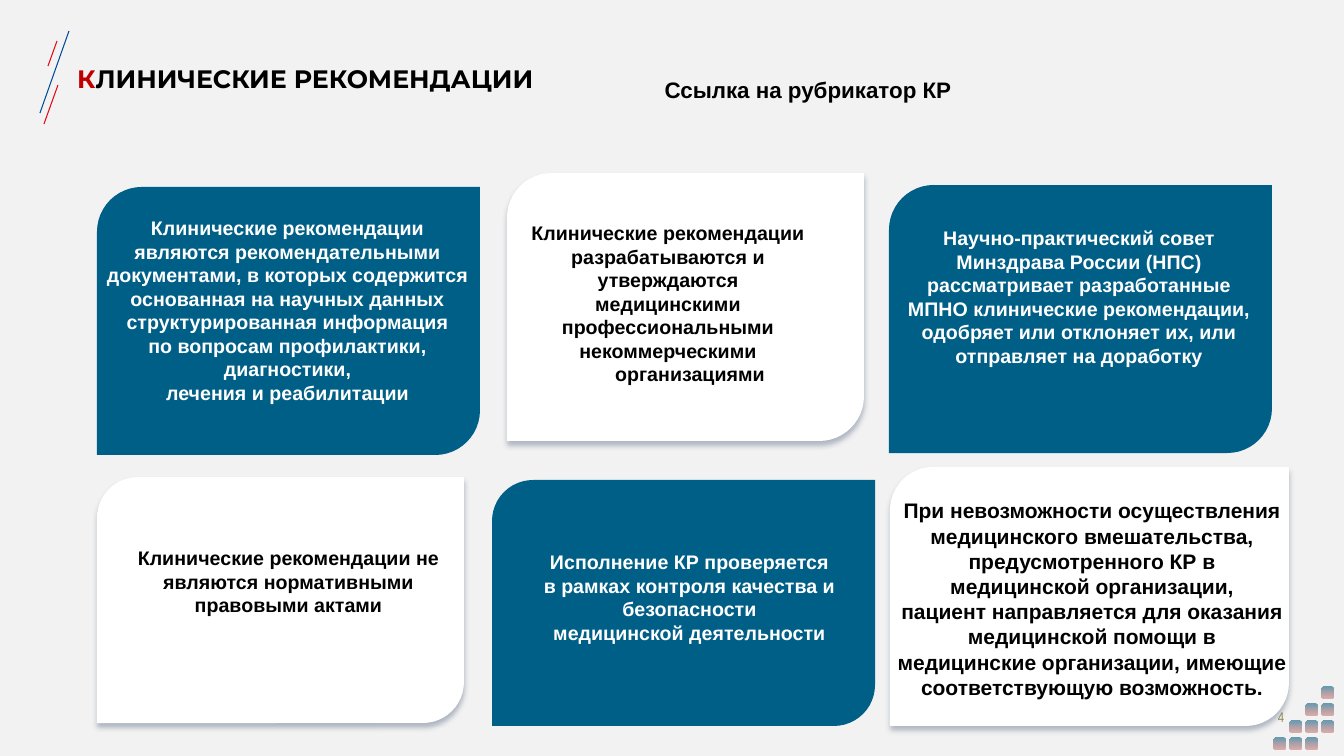
from lxml.etree import SubElement
from pptx import Presentation
from pptx.dml.color import RGBColor
from pptx.enum.shapes import MSO_CONNECTOR, MSO_SHAPE
from pptx.enum.text import MSO_ANCHOR, MSO_AUTO_SIZE, PP_ALIGN
from pptx.oxml.ns import qn
from pptx.util import Pt

PX = 12192000 / 1344
BLUE = RGBColor(0x00, 0x5F, 0x87)
NAVY = RGBColor(0x00, 0x48, 0x98)
RED = RGBColor(0xE2, 0x07, 0x13)
DARK_RED = RGBColor(0xC0, 0x00, 0x00)
BRICK = RGBColor(0xC3, 0x44, 0x3B)
TAN = RGBColor(0x94, 0x8A, 0x54)
GRAY = RGBColor(0xF2, 0xF2, 0xF2)
WHITE = RGBColor(0xFF, 0xFF, 0xFF)
BLACK = RGBColor(0x00, 0x00, 0x00)


def px(*nums):
    return [round(n * PX) for n in nums]


def write(frame, text, size=14, color=BLACK, face="Arial", bold=True,
          align=PP_ALIGN.CENTER, anchor=MSO_ANCHOR.TOP, wrap=True, first=None):
    """Fill a frame, one paragraph a line; first colours the opening letter."""
    frame.word_wrap = wrap
    frame.auto_size = MSO_AUTO_SIZE.NONE
    frame.vertical_anchor = anchor
    for i, line in enumerate(text.split("\n")):
        par = frame.add_paragraph() if i else frame.paragraphs[0]
        par.alignment = align
        for part in ([line[0], line[1:]] if first else [line]):
            run = par.add_run()
            run.text = part
            run.font.size = Pt(size)
            run.font.name = face
            run.font.bold = bold
            run.font.color.rgb = color
        if first:
            par.runs[0].font.color.rgb = first


deck = Presentation()
deck.slide_width, deck.slide_height = px(1344, 756)
slide = deck.slides.add_slide(deck.slide_layouts[5])
slide.background.fill.solid()
slide.background.fill.fore_color.rgb = GRAY
shapes = slide.shapes

# Slanted lines beside the title
for ends, color in [((48, 66, 57, 41), RED), ((40, 113, 69, 31), NAVY),
                    ((44, 124, 58, 85), RED)]:
    line = shapes.add_connector(MSO_CONNECTOR.STRAIGHT, *px(*ends))
    line.line.color.rgb = color
    line.line.width = Pt(0.75)
    SubElement(line._element.spPr, qn("a:effectLst"))

# Stair of small squares in the corner
for col in range(4):
    for row in range(col, 4 if col else 3):
        tile = shapes.add_shape(MSO_SHAPE.ROUNDED_RECTANGLE,
                                *px(1322 - 16 * col, 687 + 17 * row, 12, 12))
        tile.shadow.inherit = False
        tile.line.fill.background()
        tile.fill.gradient()
        tile.fill.gradient_angle = 270
        for stop, color, alpha in zip(tile.fill.gradient_stops, (BLUE, BRICK), (60, 40)):
            stop.color.rgb = color
        for tint, alpha in zip(tile._element.spPr.iter(qn("a:srgbClr")), (60, 40)):
            SubElement(tint, qn("a:alpha"), val=str(alpha * 1000))

# Title, page number and link caption
title = shapes.title
title.left, title.top, title.width, title.height = px(67, 47, 1050, 62)
write(title.text_frame, "КЛИНИЧЕСКИЕ РЕКОМЕНДАЦИИ", size=18, face="Montserrat",
      align=PP_ALIGN.LEFT, anchor=MSO_ANCHOR.MIDDLE, first=DARK_RED)
page = shapes.add_textbox(*px(1262, 697, 38, 40))
write(page.text_frame, "4", size=10, color=TAN, face="Arial Narrow", bold=False,
      anchor=MSO_ANCHOR.MIDDLE)
link = shapes.add_textbox(*px(653, 71, 310, 37))
write(link.text_frame, "Ссылка на рубрикатор КР", size=16, wrap=False)

# Cards: outline, text area, fill, text size, text
cards = [
    ((97, 187, 383, 268), (64, 211, 447, 201), BLUE, 14,
     "Клинические рекомендации\nявляются рекомендательными документами, в которых "
     "содержится основанная на научных данных структурированная информация\n"
     "по вопросам профилактики,\nдиагностики,\nлечения и реабилитации"),
    ((507, 173, 357, 268), (513, 216, 310, 176), WHITE, 14,
     "Клинические рекомендации разрабатываются и утверждаются медицинскими "
     "профессиональными некоммерческими\nорганизациями"),
    ((889, 185, 383, 268), (891, 221, 376, 152), BLUE, 14,
     "Научно-практический совет Минздрава России (НПС) рассматривает разработанные "
     "МПНО клинические рекомендации, одобряет или отклоняет их, или отправляет "
     "на доработку"),
    ((97, 477, 367, 246), (97, 541, 383, 82), WHITE, 14,
     "Клинические рекомендации не являются нормативными правовыми актами"),
    ((492, 480, 383, 246), (466, 545, 447, 105), BLUE, 14,
     "Исполнение КР проверяется\nв рамках контроля качества и безопасности\n"
     "медицинской деятельности"),
    ((890, 467, 399, 259), (887, 493, 410, 214), WHITE, 15,
     "При невозможности осуществления медицинского вмешательства, предусмотренного "
     "КР в медицинской организации,\nпациент направляется для оказания медицинской "
     "помощи в медицинские организации, имеющие соответствующую возможность."),
]
for place, area, fill, size, text in cards:
    card = shapes.add_shape(MSO_SHAPE.ROUND_2_DIAG_RECTANGLE, *px(*place))
    card.shadow.inherit = False
    card.fill.solid()
    card.fill.fore_color.rgb = fill
    card.line.fill.background()
    if fill == WHITE:
        glow = SubElement(card._element.spPr.find(qn("a:effectLst")), qn("a:outerShdw"),
                          blurRad=str(Pt(4)), dist=str(Pt(3)), dir="5400000",
                          algn="t", rotWithShape="0")
        tint = SubElement(glow, qn("a:srgbClr"), val="4C5E79")
        SubElement(tint, qn("a:alpha"), val="40000")
    box = shapes.add_textbox(*px(*area))
    write(box.text_frame, text, size=size, color=BLACK if fill == WHITE else WHITE)
    if text.endswith("\nорганизациями"):
        # The last word sits right of centre
        box.text_frame.paragraphs[-1]._p.get_or_add_pPr().set("marL", str(px(44)[0]))

deck.save("out.pptx")
